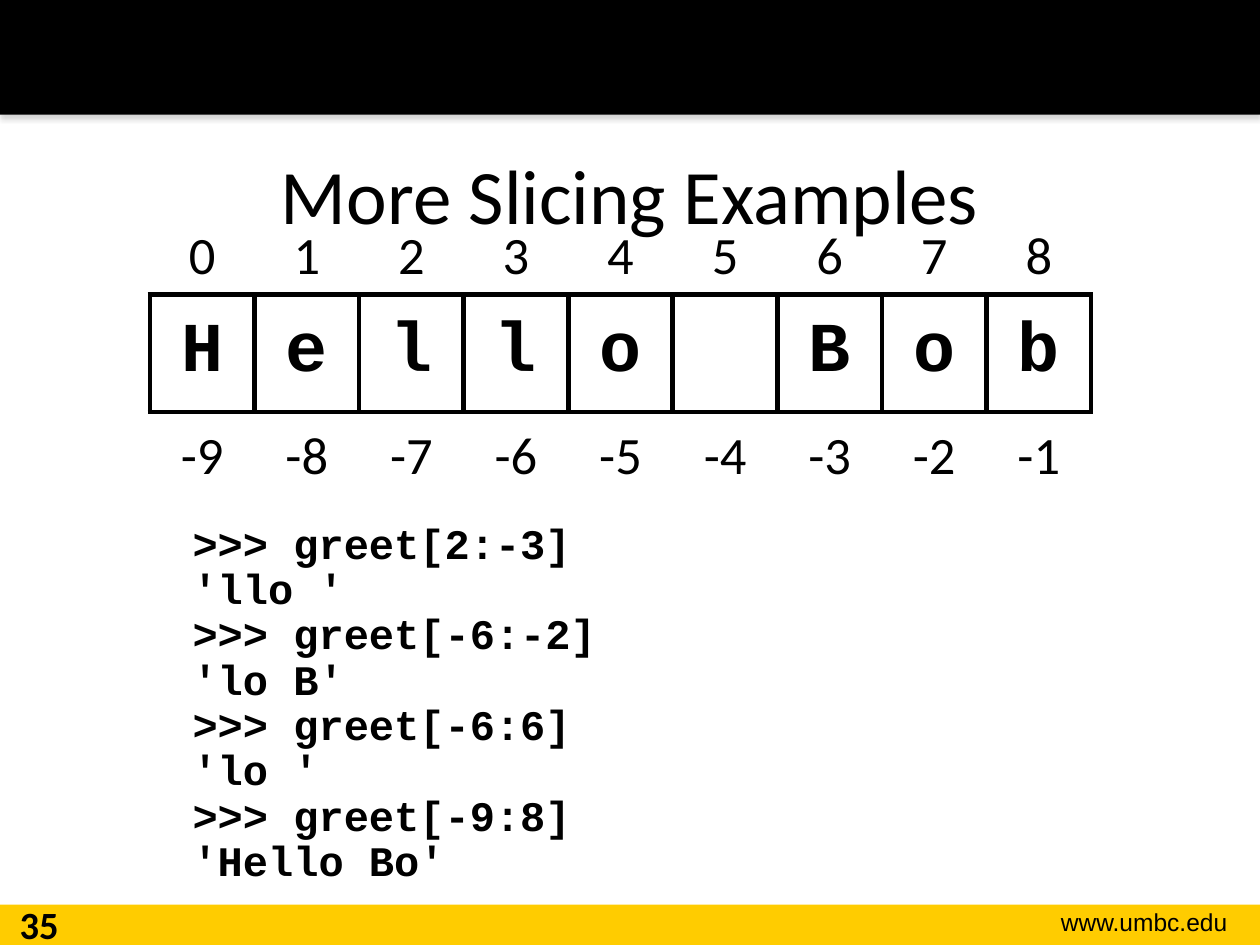
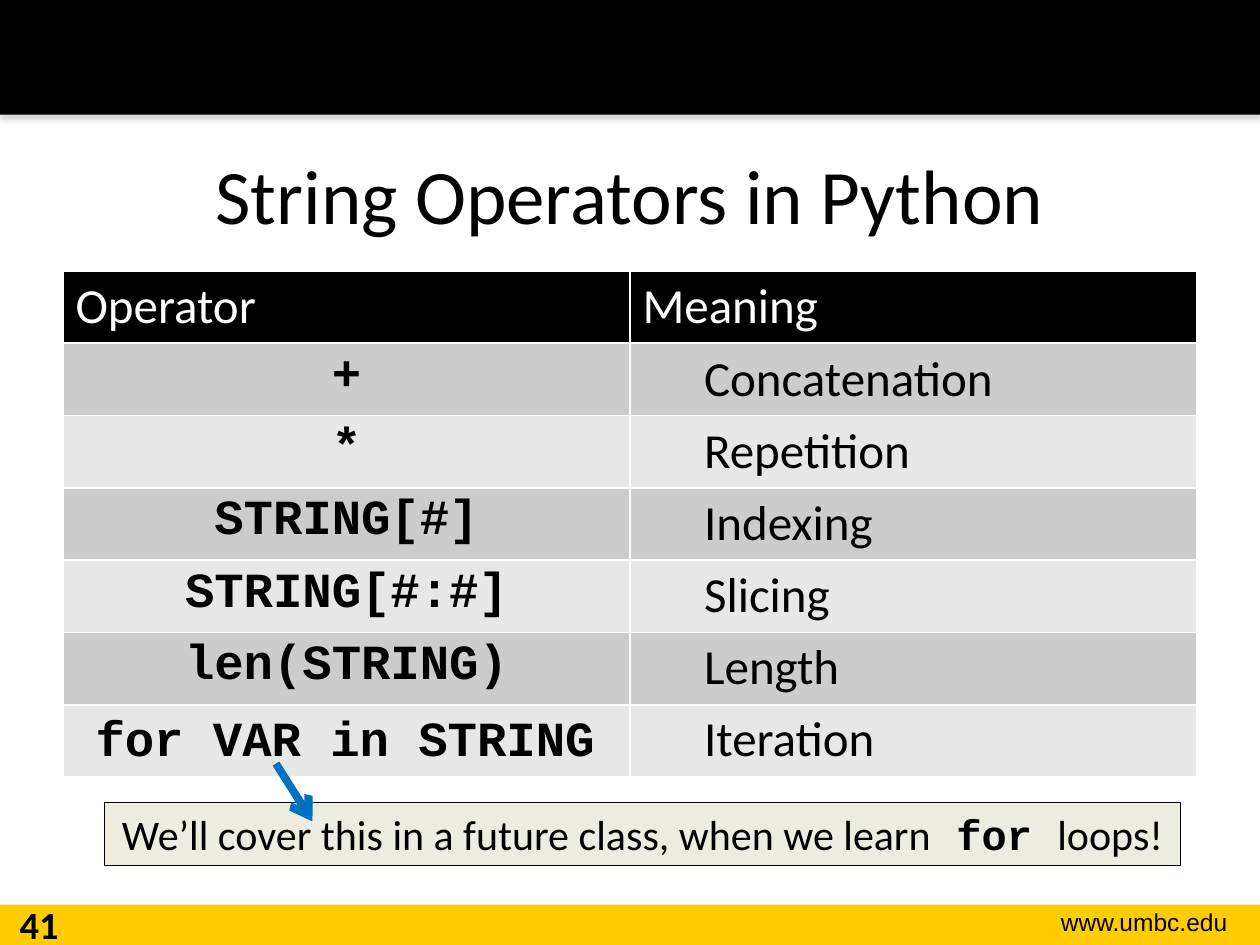
from lxml.etree import SubElement as Sub
from pptx import Presentation
from pptx.dml.color import RGBColor
from pptx.enum.shapes import MSO_CONNECTOR as Conn, MSO_SHAPE as Shape
from pptx.enum.text import MSO_ANCHOR as Anchor, PP_ALIGN as Align
from pptx.oxml.ns import qn
from pptx.util import Inches, Pt

BLACK, WHITE, GOLD = "000000", "FFFFFF", "FFCC00"
DARK, LIGHT, CREAM, BLUE = "CCCCCC", "E7E7E7", "EEECE1", "0070C0"
SANS, MONO = "Calibri", "Courier New"


def rgb(code):
    return RGBColor.from_string(code)


def style(para, size, font=SANS, color=BLACK, bold=False, align=None):
    if align is not None:
        para.alignment = align
    for run in para.runs:
        face = run.font
        face.name, face.size, face.bold = font, Pt(size), bold
        face.color.rgb = rgb(color)


def label(slide, box, text, size, anchor=Anchor.TOP, **look):
    """Add a wrapped text box; each line of text is a paragraph."""
    frame = slide.shapes.add_textbox(*map(Inches, box)).text_frame
    frame.word_wrap = True
    frame.vertical_anchor = anchor
    frame.text = text
    for para in frame.paragraphs:
        style(para, size, **look)
    return frame


def block(slide, box, fill, line=None):
    rect = slide.shapes.add_shape(Shape.RECTANGLE, *map(Inches, box))
    rect.shadow.inherit = False
    rect.fill.solid()
    rect.fill.fore_color.rgb = rgb(fill)
    if line:
        rect.line.color.rgb = rgb(line)
        rect.line.width = Pt(0.75)
    else:
        rect.line.fill.background()
    return rect


def cast(rect):
    """Give a shape a soft grey shadow below it."""
    effects = rect.element.spPr.find(qn("a:effectLst"))
    shade = Sub(effects, qn("a:outerShdw"), blurRad=str(Pt(3.1)),
                dist=str(Pt(1.8)), dir="5400000", rotWithShape="0")
    tint = Sub(shade, qn("a:srgbClr"), val="808080")
    Sub(tint, qn("a:alpha"), val="35000")


def dress(slide):
    """Draw the bands and the address, then move them to the layout."""
    block(slide, (0, 7.18, 10, 0.32), GOLD)
    cast(block(slide, (0, 0, 10, 0.91), BLACK))
    label(slide, (7.85, 7.15, 1.99, 0.34), "www.umbc.edu", 14,
          font="Arial", align=Align.RIGHT)
    for part in list(slide.shapes)[-3:]:
        slide.slide_layout.shapes.element.append(part.element)


def start(deck, title, number):
    slide = deck.slides.add_slide(deck.slide_layouts[5])
    if len(deck.slides) == 1:
        dress(slide)
    head = slide.shapes.title
    head.left, head.top, head.width, head.height = map(
        Inches, (0.5, 0.91, 9, 1.25))
    head.text_frame.text = title
    head.text_frame.vertical_anchor = Anchor.MIDDLE
    style(head.text_frame.paragraphs[0], 44, align=Align.CENTER)
    label(slide, (0, 7.1, 0.62, 0.4), number, 22, bold=True,
          align=Align.CENTER)
    return slide


def grid(slide, box, cols, heights, header=False):
    rows = len(heights)
    table = slide.shapes.add_table(rows, cols, *map(Inches, box)).table
    table.first_row = header
    table.horz_banding = False
    for row, height in zip(table.rows, heights):
        row.height = Inches(height)
    for col in table.columns:
        col.width = Inches(box[2] / cols)
    return table


def put(cell, text, size, fill=None, anchor=Anchor.TOP, **look):
    if fill:
        cell.fill.solid()
        cell.fill.fore_color.rgb = rgb(fill)
    else:
        cell.fill.background()
    cell.vertical_anchor = anchor
    if text:
        cell.text_frame.text = text
        style(cell.text_frame.paragraphs[0], size, **look)


def edge(cell, sides):
    """Draw the named sides black and hide the rest, ahead of the fill."""
    props = cell._tc.get_or_add_tcPr()
    for spot, side in enumerate("LRTB"):
        line = Sub(props, qn("a:ln" + side), w=str(Pt(3)))
        if side in sides:
            Sub(Sub(line, qn("a:solidFill")), qn("a:srgbClr"), val=BLACK)
        else:
            Sub(line, qn("a:noFill"))
        props.insert(spot, line)


def string(slide, word, left, top, width):
    """Show a word in cells, with its indexes above and below."""
    size = len(word)
    lower = grid(slide, (left, top + 1.59, width, 0.66), size, (0.66,))
    upper = grid(slide, (left, top, width, 1.59), size, (0.66, 0.93))
    for i, char in enumerate(word):
        for cell, index, sides in ((upper.cell(0, i), i, "B"),
                                   (lower.cell(0, i), i - size, "")):
            put(cell, str(index), 30, anchor=Anchor.BOTTOM,
                align=Align.CENTER)
            edge(cell, sides)
        put(upper.cell(1, i), char.strip(), 40, WHITE, Anchor.MIDDLE,
            font=MONO, bold=True, align=Align.CENTER)
        edge(upper.cell(1, i), "LRTB")


def code(slide, box, text):
    frame = label(slide, box, text, 24, font=MONO, bold=True)
    for para in frame.paragraphs:
        props = para._p.get_or_add_pPr()
        props.set("marL", str(Inches(1)))
        props.set("indent", str(Inches(-0.38)))
        para.line_spacing = 0.9


def chart(slide, box, pairs):
    """List the operators; the meanings lie over the right column."""
    left, top, _, height = box
    count = len(pairs) + 1
    step = height / count
    table = grid(slide, box, 2, [step] * count, header=True)
    for i, text in enumerate(("Operator", "Meaning")):
        put(table.cell(0, i), text, 28, BLACK, color=WHITE)
    for i, (sign, sense) in enumerate(pairs, 1):
        fill = DARK if i % 2 else LIGHT
        last = i == len(pairs)
        put(table.cell(i, 0), "" if last else sign, 28, fill,
            font=MONO, bold=True, align=Align.CENTER)
        put(table.cell(i, 1), "", 28, fill)
        y = top + i * 0.57 - 0.03
        label(slide, (left + 4.99, y, 2.66, 0.61), sense, 28,
              Anchor.MIDDLE)
        if last:
            label(slide, (left + 0.16, y, 4.21, 0.61), sign, 28,
                  Anchor.MIDDLE, font=MONO, bold=True)


def note(slide, box, parts):
    """Add a framed remark whose middle part is code."""
    frame = block(slide, box, CREAM, BLACK).text_frame
    frame.word_wrap = False
    para = frame.paragraphs[0]
    for part in parts:
        para.add_run().text = part
    style(para, 24, align=Align.CENTER)
    word = para.runs[1].font
    word.name, word.bold = MONO, True


def arrow(slide, *ends):
    line = slide.shapes.add_connector(Conn.STRAIGHT, *map(Inches, ends))
    line.line.color.rgb = rgb(BLUE)
    line.line.width = Pt(4.5)
    Sub(line.line._get_or_add_ln(), qn("a:tailEnd"), type="arrow")
    Sub(line.element.spPr, qn("a:effectLst"))


def slicing(deck):
    slide = start(deck, "More Slicing Examples", "35")
    string(slide, "Hello Bob", 1.19, 1.68, 7.47)
    code(slide, (0.81, 4.1, 8.5, 3.04), "\n".join((
        ">>> greet[2:-3]", "'llo '",
        ">>> greet[-6:-2]", "'lo B'",
        ">>> greet[-6:6]", "'lo '",
        ">>> greet[-9:8]", "'Hello Bo'")))


def operators(deck):
    slide = start(deck, "String Operators in Python", "41")
    chart(slide, (0.5, 2.15, 9, 4.02), (
        ("+", "Concatenation"), ("*", "Repetition"),
        ("STRING[#]", "Indexing"), ("STRING[#:#]", "Slicing"),
        ("len(STRING)", "Length"), ("for VAR in STRING", "Iteration")))
    note(slide, (0.83, 6.37, 8.54, 0.5),
         ("We’ll cover this in a future class, when we learn", " for ",
          "loops!"))
    arrow(slide, 2.19, 6.06, 2.48, 6.52)


def main():
    deck = Presentation()
    deck.slide_width, deck.slide_height = Inches(10), Inches(7.5)
    slicing(deck)
    operators(deck)
    deck.save("out.pptx")


if __name__ == "__main__":
    main()
